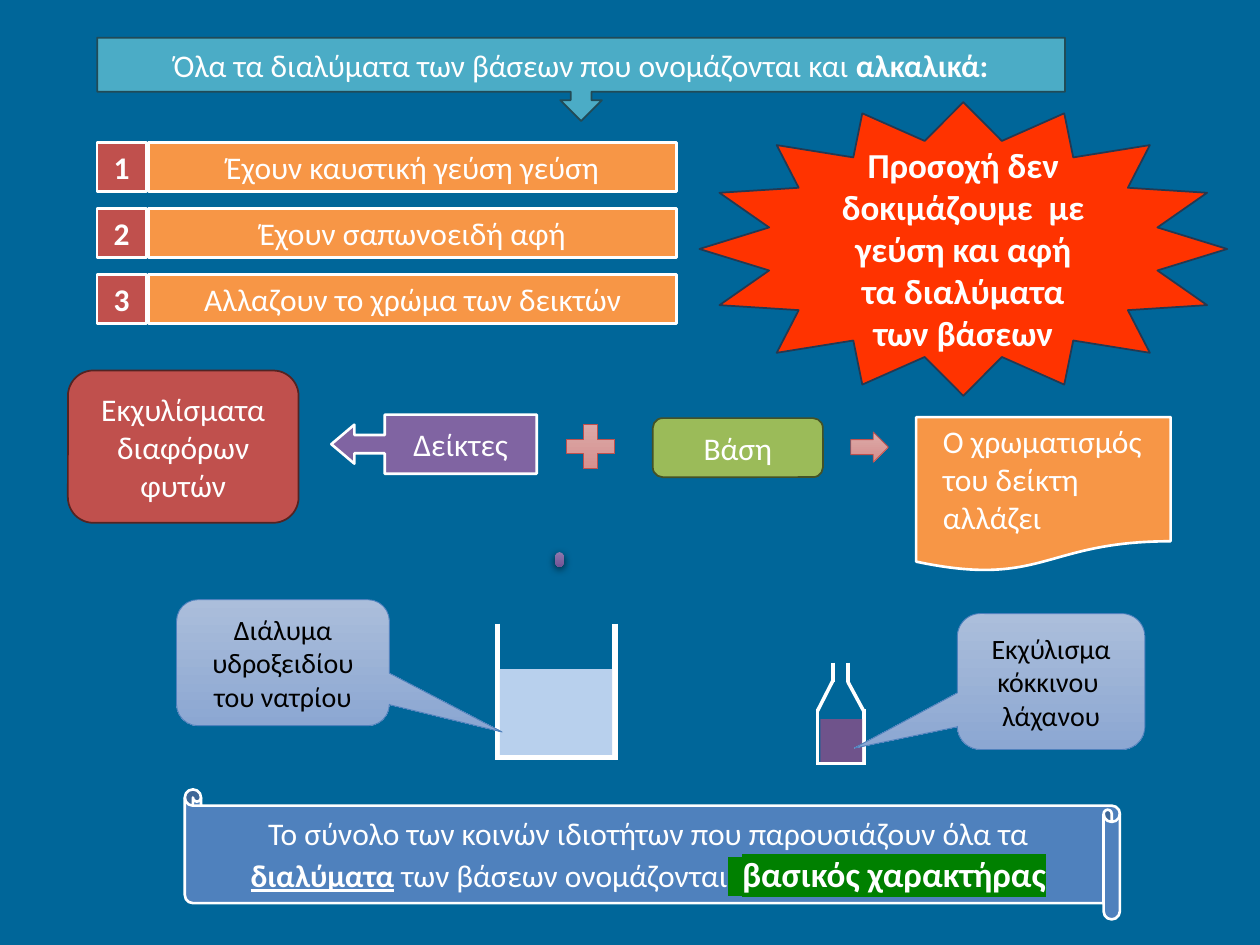
from dataclasses import dataclass

from lxml import etree
from pptx import Presentation
from pptx.dml.color import RGBColor
from pptx.enum.shapes import MSO_CONNECTOR, MSO_SHAPE
from pptx.enum.text import MSO_ANCHOR, PP_ALIGN
from pptx.oxml.ns import qn
from pptx.util import Cm, Pt

RECTANGLE = MSO_SHAPE.RECTANGLE
ROUNDED = MSO_SHAPE.ROUNDED_RECTANGLE
SPEECH = MSO_SHAPE.ROUNDED_RECTANGULAR_CALLOUT
STRAIGHT = MSO_CONNECTOR.STRAIGHT
CENTER = PP_ALIGN.CENTER
LEFT = PP_ALIGN.LEFT
MIDDLE = MSO_ANCHOR.MIDDLE

FONT = "Calibri"
WHITE = "FFFFFF"
RED = "C0504D"
ORANGE = "F79646"
BLUE = "4F81BD"
PINK_GRADIENT = ("DDACAB", "D48D8B")
BLUE_GRADIENT = ("ABBEDB", "8CA7D2")
PURPLE_GRADIENT = ("8E78AC", "715396")


@dataclass(frozen=True)
class Box:
    left: float
    top: float
    width: float
    height: float


@dataclass(frozen=True)
class Segment:
    x1: float
    y1: float
    x2: float
    y2: float


@dataclass(frozen=True)
class Speech:
    box: Box
    text: str
    adjustments: tuple[float, ...]


PROPERTIES = (
    "Έχουν καυστική γεύση γεύση",
    "Έχουν σαπωνοειδή αφή",
    "Αλλαζουν το χρώμα των δεικτών",
)
BEAKER = (
    Segment(10.03, 12.57, 10.03, 15.32),
    Segment(12.4, 12.57, 12.4, 15.32),
    Segment(10.03, 15.27, 12.37, 15.27),
)
BOTTLE = (
    Segment(16.48, 14.3, 16.48, 15.42),
    Segment(17.42, 14.3, 17.42, 15.42),
    Segment(16.46, 15.39, 17.45, 15.39),
    Segment(16.48, 14.33, 16.79, 13.72),
    Segment(17.42, 14.35, 17.09, 13.74),
    Segment(16.79, 13.36, 16.79, 13.74),
    Segment(17.09, 13.36, 17.09, 13.74),
)
SPEECHES = (
    Speech(Box(19.3, 12.37, 3.78, 2.74), "Εκχύλισμα κόκκινου  λάχανου", (-1.05, 0.49, 0.17)),
    Speech(Box(3.56, 12.09, 4.29, 2.54), "Διάλυμα υδροξειδίου του νατρίου", (1.03, 0.55, 0.17)),
)


def rgb(value: str) -> RGBColor:
    return RGBColor.from_string(value)


def add_box(shapes, kind, box: Box, fill, line=None, line_width=1.0, adjustments=()):
    shape = shapes.add_shape(kind, Cm(box.left), Cm(box.top), Cm(box.width), Cm(box.height))
    shape.shadow.inherit = False
    for index, value in enumerate(adjustments):
        shape.adjustments[index] = value
    if isinstance(fill, tuple):
        shape.fill.gradient()
        shape.fill.gradient_angle = 270
        for stop, color in zip(shape.fill.gradient_stops, fill):
            stop.color.rgb = rgb(color)
    else:
        shape.fill.solid()
        shape.fill.fore_color.rgb = rgb(fill)
    if line:
        shape.line.color.rgb = rgb(line)
        shape.line.width = Pt(line_width)
    else:
        shape.line.fill.background()
    return shape


def add_run(paragraph, text: str, *, size=18, color=WHITE, bold=False, underline=False, highlight=None):
    run = paragraph.add_run()
    run.text = text
    font = run.font
    font.name, font.size, font.bold, font.underline = FONT, Pt(size), bold, underline
    font.color.rgb = rgb(color)
    if highlight:
        mark = etree.Element(qn("a:highlight"))
        etree.SubElement(mark, qn("a:srgbClr"), val=highlight)
        run._r.rPr.find(qn("a:solidFill")).addnext(mark)


def write(shape, text: str, *, align=CENTER, **style):
    frame = shape.text_frame
    frame.word_wrap = True
    frame.vertical_anchor = MIDDLE
    for index, line in enumerate(text.split("\n")):
        paragraph = frame.add_paragraph() if index else frame.paragraphs[0]
        paragraph.alignment = align
        add_run(paragraph, line, **style)
    return frame.paragraphs[0]


def add_vessel(shapes, segments: tuple[Segment, ...], width: float):
    group = shapes.add_group_shape()
    for segment in segments:
        connector = group.shapes.add_connector(
            STRAIGHT, Cm(segment.x1), Cm(segment.y1), Cm(segment.x2), Cm(segment.y2)
        )
        connector.line.color.rgb = rgb(WHITE)
        connector.line.width = Pt(width)
        etree.SubElement(connector._element.spPr, qn("a:effectLst"))
    return group


def add_drop_shadow(shape):
    effects = shape._element.spPr.find(qn("a:effectLst"))
    shadow = etree.SubElement(
        effects, qn("a:outerShdw"), blurRad=str(Pt(4.5)), dist=str(Pt(1.5)), dir="5400000"
    )
    color = etree.SubElement(shadow, qn("a:srgbClr"), val="000000")
    etree.SubElement(color, qn("a:alpha"), val="63000")


def add_reaction(shapes):
    extracts = add_box(shapes, ROUNDED, Box(1.37, 7.47, 4.65, 3.07), RED, "542322")
    write(extracts, "Εκχυλίσματα διαφόρων φυτών")
    indicators = add_box(shapes, MSO_SHAPE.LEFT_ARROW_CALLOUT, Box(6.68, 8.36, 4.14, 1.19),
                         "8064A2", WHITE, 1.5, (0.31, 0.33, 0.39, 0.74))
    write(indicators, "Δείκτες")
    add_box(shapes, MSO_SHAPE.MATH_PLUS, Box(11.25, 8.41, 1.32, 1.19), PINK_GRADIENT, RED, 0.5)
    base = add_box(shapes, ROUNDED, Box(13.16, 8.43, 3.43, 1.19), "9BBB59", "445227")
    write(base, "Βάση")
    add_box(shapes, MSO_SHAPE.RIGHT_ARROW, Box(17.15, 8.71, 0.76, 0.61), PINK_GRADIENT, RED, 0.5)
    result = add_box(shapes, MSO_SHAPE.FLOWCHART_DOCUMENT, Box(18.47, 8.41, 5.13, 3.12),
                     ORANGE, WHITE, 1.5)
    write(result, "Ο χρωματισμός\nτου δείκτη\nαλλάζει", align=LEFT)
    result.text_frame.margin_left = Cm(0.54)


def add_experiment(shapes):
    add_vessel(shapes, BEAKER, 3)
    add_box(shapes, RECTANGLE, Box(10.08, 13.49, 2.26, 1.73), "B8D0ED")
    bottle = add_vessel(shapes, BOTTLE, 2)
    add_box(bottle.shapes, RECTANGLE, Box(16.54, 14.5, 0.84, 0.86), "6F538B")
    drop = add_box(shapes, MSO_SHAPE.OVAL, Box(11.18, 11.13, 0.2, 0.3), PURPLE_GRADIENT)
    add_drop_shadow(drop)
    for speech in SPEECHES:
        shape = add_box(shapes, SPEECH, speech.box, BLUE_GRADIENT, BLUE, 0.5, speech.adjustments)
        write(shape, speech.text, size=16, color="000000")


def add_properties(shapes):
    heading = add_box(shapes, MSO_SHAPE.DOWN_ARROW_CALLOUT, Box(1.96, 0.76, 19.51, 1.68),
                      "4BACC6", "214B57")
    paragraph = write(heading, "Όλα τα διαλύματα των βάσεων που ονομάζονται και ")
    add_run(paragraph, "αλκαλικά:", bold=True)
    for index, text in enumerate(PROPERTIES):
        top = 2.87 + 1.33 * index
        number = add_box(shapes, RECTANGLE, Box(1.96, top, 0.99, 0.99), RED, WHITE, 1.5)
        write(number, str(index + 1), bold=True)
        label = add_box(shapes, RECTANGLE, Box(3, top, 10.64, 0.99), ORANGE, WHITE, 1.5)
        write(label, text)


def add_conclusion(shapes):
    scroll = add_box(shapes, MSO_SHAPE.VERTICAL_SCROLL, Box(11.84, 7.8, 2.62, 18.85), BLUE, WHITE, 1.5)
    scroll.rotation = 90
    paragraph = write(scroll, "Το σύνολο των κοινών ιδιοτήτων που παρουσιάζουν όλα τα ")
    scroll.text_frame._txBody.bodyPr.set("vert", "vert270")
    add_run(paragraph, "διαλύματα", bold=True, underline=True)
    add_run(paragraph, " των βάσεων ονομάζονται")
    add_run(paragraph, "  ", highlight="008000")
    add_run(paragraph, "βασικός χαρακτήρας", size=20, bold=True, highlight="008000")


def add_warning(shapes):
    star = add_box(shapes, MSO_SHAPE.STAR_16_POINT, Box(14.1, 2.06, 10.64, 5.92), "FF3300", "233953")
    write(star, "Προσοχή δεν δοκιμάζουμε  με γεύση και αφή τα διαλύματα των βάσεων", size=20, bold=True)


def main():
    presentation = Presentation()
    presentation.slide_width, presentation.slide_height = Cm(25.4), Cm(19.05)
    slide = presentation.slides.add_slide(presentation.slide_layouts[6])
    slide.background.fill.solid()
    slide.background.fill.fore_color.rgb = rgb("006699")
    for draw in (add_reaction, add_experiment, add_properties, add_conclusion, add_warning):
        draw(slide.shapes)
    presentation.save("out.pptx")


if __name__ == "__main__":
    main()
